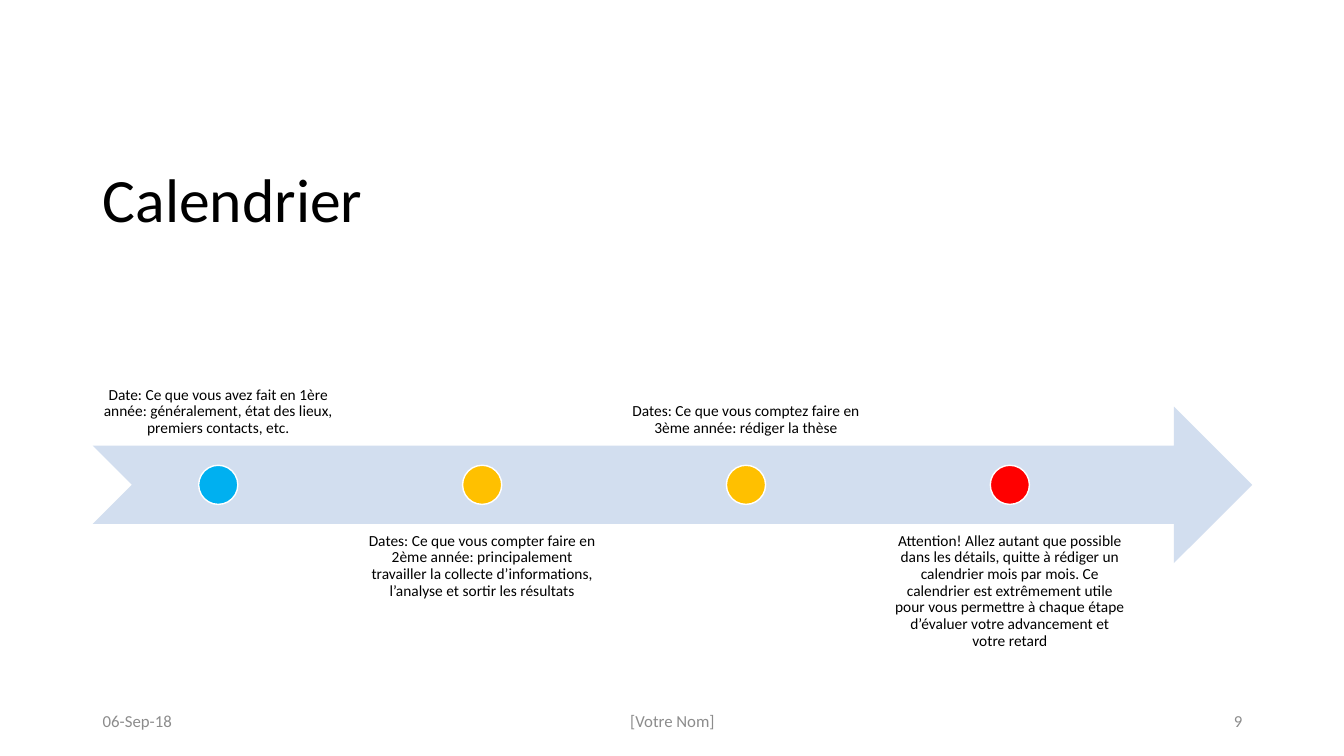
from dataclasses import dataclass

from pptx import Presentation
from pptx import util as u
from pptx.dml.color import RGBColor
from pptx.enum import shapes, text


@dataclass(frozen=True)
class Theme:
    """Colours, font and type sizes of the deck."""
    font: str = "Calibri"
    ink: str = "000000"
    muted: str = "8C8C8C"
    band: str = "D2DEEF"
    rim: str = "FFFFFF"
    done: str = "00B0F0"
    planned: str = "FFC000"
    warning: str = "FF0000"
    title_size: int = 44
    label_size: int = 11
    footer_size: int = 12


THEME = Theme()
ALIGN = text.PP_ALIGN
ANCHOR = text.MSO_ANCHOR

MILESTONES = [
    ("Date: Ce que vous avez fait en 1ère année: généralement, état des lieux, "
     "premiers contacts, etc.", THEME.done),
    ("Dates: Ce que vous compter faire en 2ème année: principalement travailler "
     "la collecte d’informations, l’analyse et sortir les résultats", THEME.planned),
    ("Dates: Ce que vous comptez faire en 3ème année: rédiger la thèse", THEME.planned),
    ("Attention! Allez autant que possible dans les détails, quitte à rédiger un "
     "calendrier mois par mois. Ce calendrier est extrêmement utile pour vous "
     "permettre à chaque étape d’évaluer votre advancement et votre retard",
     THEME.warning),
]


def inches(*lengths):
    """Convert plain numbers to lengths."""
    return [u.Inches(length) for length in lengths]


def write(frame, wording, size, color, align, anchor, spacing=1.0):
    """Fill a text frame with one formatted paragraph."""
    frame.text = wording
    frame.word_wrap = True
    frame.auto_size = text.MSO_AUTO_SIZE.NONE
    frame.vertical_anchor = anchor
    line = frame.paragraphs[0]
    line.alignment = align
    line.line_spacing = spacing
    font = line.runs[0].font
    font.name = THEME.font
    font.size = u.Pt(size)
    font.color.rgb = RGBColor.from_string(color)


def add_filled(slide, kind, box, fill, rim=None):
    """Add a flat preset shape, with a thin rim if one is given."""
    shape = slide.shapes.add_shape(kind, *inches(*box))
    shape.shadow.inherit = False
    shape.fill.solid()
    shape.fill.fore_color.rgb = RGBColor.from_string(fill)
    if rim:
        shape.line.color.rgb = RGBColor.from_string(rim)
        shape.line.width = u.Pt(1)
    else:
        shape.line.fill.background()


def add_title(slide, box, wording):
    """Place and format the title placeholder."""
    title = slide.shapes.title
    title.left, title.top, title.width, title.height = inches(*box)
    write(title.text_frame, wording, THEME.title_size, THEME.ink,
          ALIGN.LEFT, ANCHOR.MIDDLE, 0.9)


def add_timeline(slide, box, milestones):
    """Draw an arrow with dots and labels alternating above and below it."""
    left, top, width, height = box
    band_height = height * 0.4
    band_top = top + (height - band_height) / 2
    label_width, step, dot = 2.49, 2.617, band_height / 4
    add_filled(slide, shapes.MSO_SHAPE.NOTCHED_RIGHT_ARROW,
               (left, band_top, width, band_height), THEME.band)
    for index, (wording, color) in enumerate(milestones):
        label_left = left + index * step
        above = index % 2 == 0
        label_top = top if above else top + height - band_height
        label = slide.shapes.add_textbox(
            *inches(label_left, label_top, label_width, band_height))
        frame = label.text_frame
        frame.margin_left = frame.margin_right = u.Inches(0.09)
        frame.margin_top = frame.margin_bottom = u.Inches(0.09)
        write(frame, wording, THEME.label_size, THEME.ink, ALIGN.CENTER,
              ANCHOR.BOTTOM if above else ANCHOR.TOP, 0.9)
        add_filled(slide, shapes.MSO_SHAPE.OVAL,
                   (label_left + (label_width - dot) / 2,
                    top + (height - dot) / 2, dot, dot), color, THEME.rim)


def add_footer(slide, box, date, author, number):
    """Set the date, author and page number along the bottom."""
    left, top, width, height = box
    side, middle = 3, 4.5
    parts = [
        (date, left, side, ALIGN.LEFT),
        (author, left + (width - middle) / 2, middle, ALIGN.CENTER),
        (number, left + width - side, side, ALIGN.RIGHT),
    ]
    for wording, part_left, part_width, align in parts:
        part = slide.shapes.add_textbox(*inches(part_left, top, part_width, height))
        write(part.text_frame, wording, THEME.footer_size, THEME.muted,
              align, ANCHOR.MIDDLE)


def main():
    """Build and save the calendar slide."""
    deck = Presentation()
    deck.slide_width, deck.slide_height = inches(13.33, 7.5)
    slide = deck.slides.add_slide(deck.slide_layouts[5])
    left, width = 0.92, 11.5
    add_title(slide, (left, 1.28, width, 1.45), "Calendrier")
    add_timeline(slide, (left, 2.87, width, 3.88), MILESTONES)
    add_footer(slide, (left, 6.95, width, 0.4), "06-Sep-18", "[Votre Nom]", "9")
    deck.save("out.pptx")


if __name__ == "__main__":
    main()
